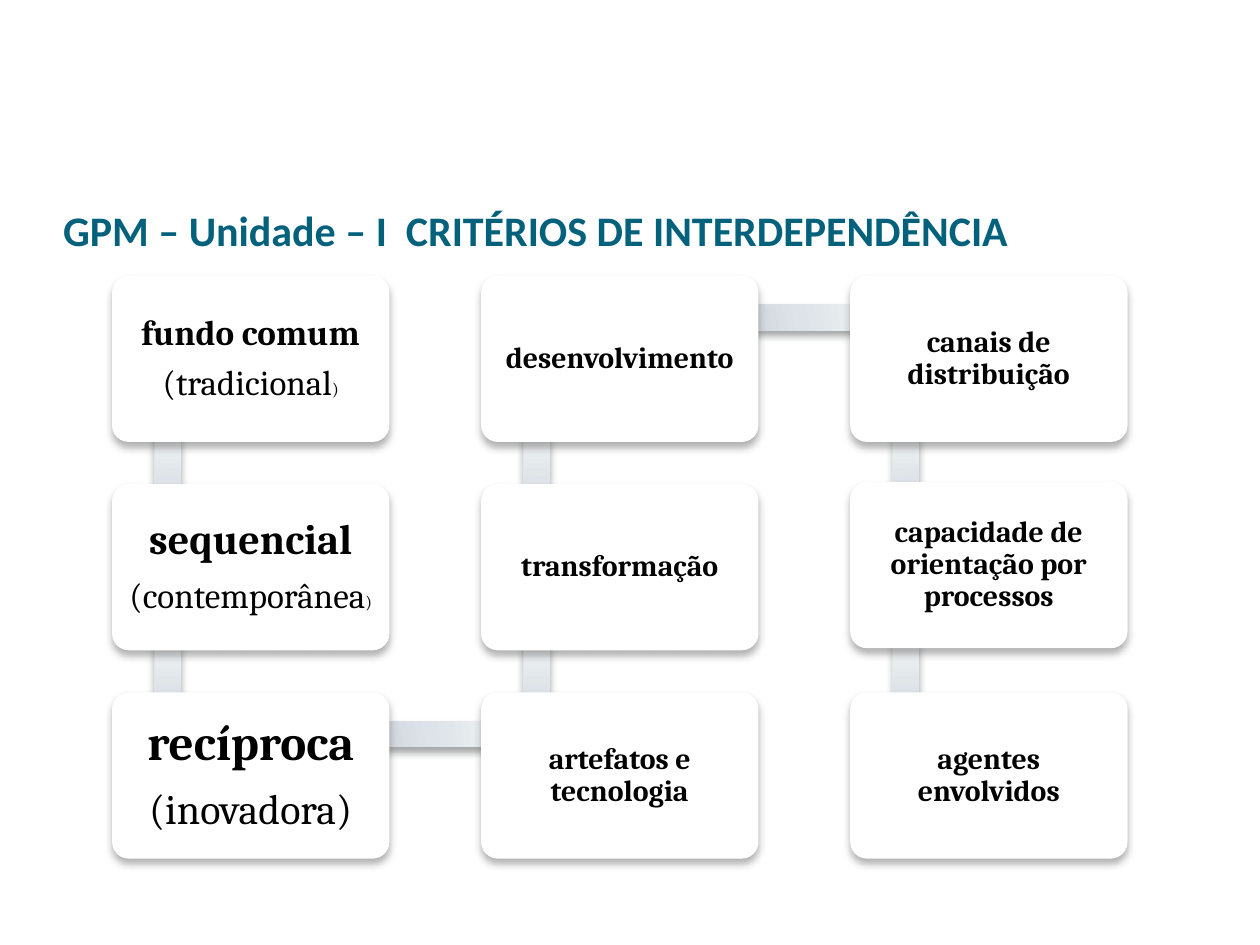
from lxml import etree
from pptx import Presentation
from pptx.dml.color import RGBColor
from pptx.enum.shapes import MSO_SHAPE
from pptx.enum.text import MSO_ANCHOR, MSO_AUTO_SIZE, PP_ALIGN
from pptx.oxml.ns import qn
from pptx.util import Cm, Pt

RECTANGLE = MSO_SHAPE.RECTANGLE
ROUNDED = MSO_SHAPE.ROUNDED_RECTANGLE
MIDDLE, BOTTOM = MSO_ANCHOR.MIDDLE, MSO_ANCHOR.BOTTOM
NO_AUTOFIT = MSO_AUTO_SIZE.NONE
LEFT, CENTER = PP_ALIGN.LEFT, PP_ALIGN.CENTER

# Card grid, in centimetres
GRID_LEFT, GRID_TOP = 2.26, 5.56
COLUMN_STEP, ROW_STEP = 7.44, 4.2
CARD_WIDTH, CARD_HEIGHT = 5.59, 3.35
LINK_THICKNESS = 0.52
VERTICAL_LENGTH, HORIZONTAL_LENGTH = 4.17, 7.42

LINK_STOPS = [(0, "C8D0D6"), (43, "DDE3E8"), (93, "F4F6F7"), (100, "FBFCFD")]


def single(text, size=17):
    """One bold paragraph, as a list of paragraphs of (text, size, bold) runs."""
    return [[(text, size, True)]]


# (column, row, inset in cm, paragraphs)
CARDS = [
    (0, 0, 0.2, single("fundo comum", 20)
     + [[("(tradicional", 20, False), (")", 10, False)]]),
    (0, 1, 0.25, single("sequencial", 24)
     + [[("(contemporânea", 20, False), (")", 10, False)]]),
    (0, 2, 0.3, single("recíproca", 28) + [[("(inovadora)", 24, False)]]),
    (1, 2, 0.18, single("artefatos e tecnologia")),
    (1, 1, 0.18, single("transformação")),
    (1, 0, 0.18, single("desenvolvimento")),
    (2, 0, 0.18, single("canais de distribuição")),
    (2, 0.99, 0.18, single("capacidade de orientação por processos")),
    (2, 2, 0.18, single("agentes envolvidos")),
]


def color(value):
    return RGBColor.from_string(value)


def add_run(paragraph, text, size, bold, font_name, font_color):
    run = paragraph.add_run()
    run.text = text
    run.font.size = Pt(size)
    run.font.bold = bold
    run.font.name = font_name
    run.font.color.rgb = color(font_color)


def add_color_element(parent, value, alpha=None):
    element = etree.SubElement(parent, qn("a:srgbClr"), val=value)
    if alpha is not None:
        etree.SubElement(element, qn("a:alpha"), val=str(alpha * 1000))


def set_shadow(shape, value):
    """Give the shape a soft shadow straight below it."""
    shape.shadow.inherit = False
    effects = shape.element.spPr.find(qn("a:effectLst"))
    shadow = etree.SubElement(
        effects, qn("a:outerShdw"), blurRad=str(Pt(4.5)), dist=str(Pt(3)),
        dir="5400000", algn="ctr", rotWithShape="0")
    add_color_element(shadow, value, 48)


def set_radial_gradient(shape, stops):
    """Fill with a circular gradient centred below the shape."""
    shape.fill.gradient()
    gradient = shape.element.spPr.find(qn("a:gradFill"))
    for child in list(gradient):
        gradient.remove(child)
    stop_list = etree.SubElement(gradient, qn("a:gsLst"))
    for position, value in stops:
        stop = etree.SubElement(stop_list, qn("a:gs"), pos=str(position * 1000))
        add_color_element(stop, value)
    circle = etree.SubElement(gradient, qn("a:path"), path="circle")
    etree.SubElement(circle, qn("a:fillToRect"),
                     l="50000", t="130000", r="50000", b="-30000")


def card_position(column, row):
    return GRID_LEFT + column * COLUMN_STEP, GRID_TOP + row * ROW_STEP


def add_link(slide, left, top, length, rotation=0):
    shape = slide.shapes.add_shape(
        RECTANGLE, Cm(left), Cm(top), Cm(length), Cm(LINK_THICKNESS))
    shape.rotation = rotation
    set_radial_gradient(shape, LINK_STOPS)
    shape.line.fill.background()
    set_shadow(shape, "3C4043")


def add_vertical_link(slide, column, row, rotation):
    """Link a card to the one below it with a rotated bar."""
    left, top = card_position(column, row)
    center_x, center_y = left + 1.12, top + 2.95
    add_link(slide, center_x - VERTICAL_LENGTH / 2,
             center_y - LINK_THICKNESS / 2, VERTICAL_LENGTH, rotation)


def add_horizontal_link(slide, column, row):
    left, top = card_position(column, row)
    add_link(slide, left + 1.14, top + 0.58, HORIZONTAL_LENGTH)


def add_card(slide, column, row, inset, paragraphs):
    left, top = card_position(column, row)
    shape = slide.shapes.add_shape(
        ROUNDED, Cm(left), Cm(top), Cm(CARD_WIDTH), Cm(CARD_HEIGHT))
    shape.adjustments[0] = 0.1
    shape.fill.solid()
    shape.fill.fore_color.rgb = color("FFFFFF")
    shape.line.fill.background()
    set_shadow(shape, "5A5A5A")

    frame = shape.text_frame
    frame.word_wrap = True
    frame.vertical_anchor = MIDDLE
    frame.margin_left = frame.margin_right = Cm(inset)
    frame.margin_top = frame.margin_bottom = Cm(inset)
    for index, runs in enumerate(paragraphs):
        paragraph = frame.add_paragraph() if index else frame.paragraphs[0]
        paragraph.alignment = CENTER
        paragraph.line_spacing = 0.9
        if index < len(paragraphs) - 1:
            paragraph.space_after = Pt(round(0.35 * runs[0][1], 1))
        for text, size, bold in runs:
            add_run(paragraph, text, size, bold, "Cambria", "000000")


def format_title(slide, text):
    title = slide.shapes.title
    title.left, title.top = Cm(1.27), Cm(3.33)
    title.width, title.height = Cm(22.86), Cm(1.8)
    frame = title.text_frame
    frame.word_wrap = True
    frame.auto_size = NO_AUTOFIT
    frame.vertical_anchor = BOTTOM
    frame.margin_left = frame.margin_right = frame.margin_bottom = 0
    frame.margin_top = Cm(0.13)
    paragraph = frame.paragraphs[0]
    paragraph.alignment = LEFT
    add_run(paragraph, text, 24, True, "Calibri", "04617B")


def main():
    presentation = Presentation()
    presentation.slide_width, presentation.slide_height = Cm(25.4), Cm(19.05)
    slide = presentation.slides.add_slide(presentation.slide_layouts[5])
    format_title(slide, "GPM – Unidade – I  CRITÉRIOS DE INTERDEPENDÊNCIA")

    for column, rotation in enumerate((90, 270, 90)):
        for row in range(2):
            add_vertical_link(slide, column, row, rotation)
    add_horizontal_link(slide, 0, 2)
    add_horizontal_link(slide, 1, 0)
    for card in CARDS:
        add_card(slide, *card)

    presentation.save("out.pptx")


if __name__ == "__main__":
    main()
